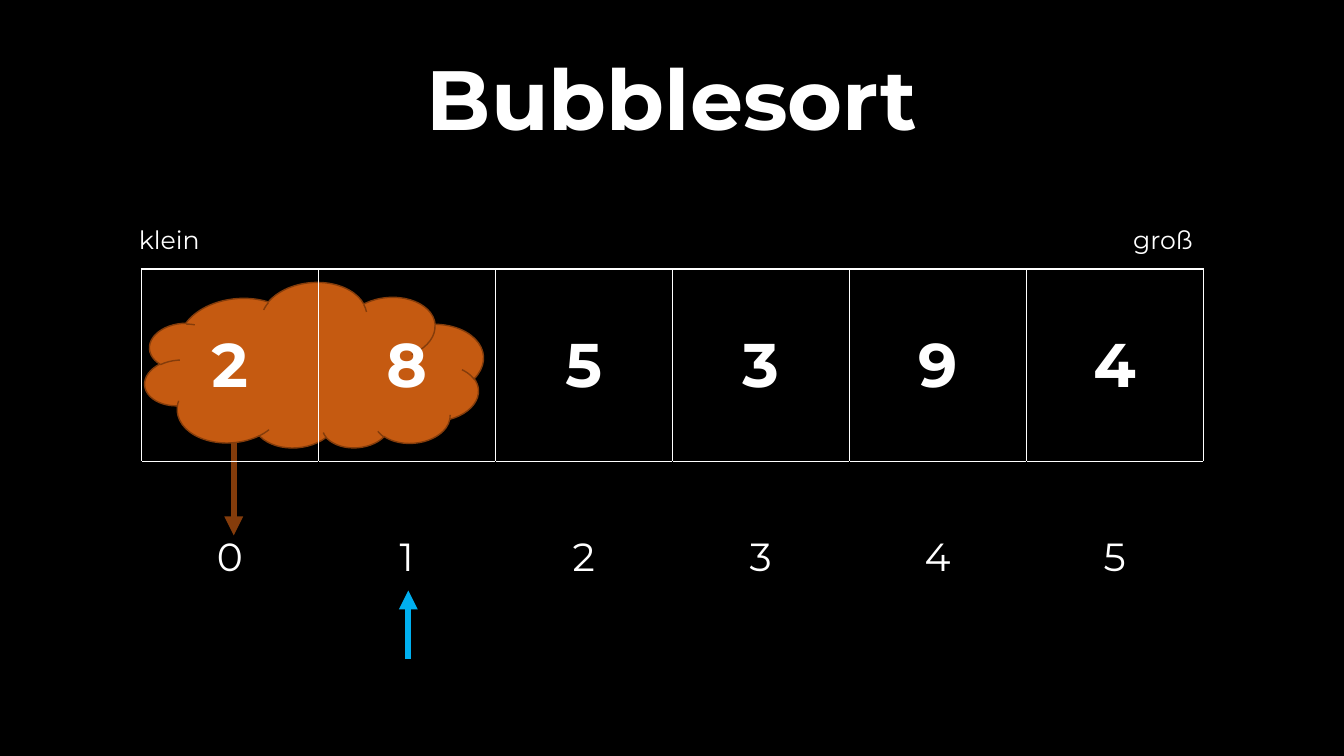
from lxml import etree
from pptx import Presentation
from pptx import util as u
from pptx.dml.color import RGBColor
from pptx.enum import shapes, text
from pptx.oxml.ns import qn

FONT = "Montserrat"
WHITE, BLACK = "FFFFFF", "000000"
BROWN, ORANGE, BLUE = "843C0B", "C55A11", "00B0F0"
VALUES = [2, 8, 5, 3, 9, 4]
COL_W, ROW_H = 4.46, 4.85
TABLE_X, TABLE_Y = 3.56, 6.78


def rgb(color):
    return RGBColor.from_string(color)


def box(*lengths):
    return [u.Cm(n) for n in lengths]


def write(tf, content, size, align, bold=False):
    """Fill a text frame with one white paragraph."""
    tf.text = str(content)
    p = tf.paragraphs[0]
    p.alignment = align
    p.font.name, p.font.size, p.font.bold = FONT, u.Pt(size), bold
    p.font.color.rgb = rgb(WHITE)
    return p


def add_title(s, content):
    sp = s.shapes.title
    sp.left, sp.top, sp.width, sp.height = box(0.38, 0.79, 33.1, 3.61)
    tf = sp.text_frame
    tf.word_wrap = True
    tf.auto_size = text.MSO_AUTO_SIZE.NONE
    tf.vertical_anchor = text.MSO_ANCHOR.MIDDLE
    p = write(tf, content, 60, text.PP_ALIGN.CENTER, True)
    p.line_spacing = 0.9
    p.space_before = u.Pt(10)


def add_label(s, content, x, align):
    tf = s.shapes.add_textbox(*box(x, 5.54, 3.84, 1.02)).text_frame
    tf.word_wrap = True
    write(tf, content, 18, align)


def add_arrow(s, x, y_from, y_to, color):
    """Draw a vertical arrow with its head at y_to."""
    c = s.shapes.add_connector(shapes.MSO_CONNECTOR.STRAIGHT, *box(x, y_from, x, y_to))
    c.line.color.rgb = rgb(color)
    c.line.width = u.Pt(4.5)
    etree.SubElement(c.line._get_or_add_ln(), qn("a:tailEnd"), type="triangle")
    etree.SubElement(c._element.spPr, qn("a:effectLst"))


def add_cloud(s):
    sp = s.shapes.add_shape(shapes.MSO_SHAPE.CLOUD, *box(3.63, 7.14, 8.56, 4.24))
    sp.shadow.inherit = False
    sp.fill.solid()
    sp.fill.fore_color.rgb = rgb(ORANGE)
    sp.line.color.rgb = rgb(BROWN)
    sp.line.width = u.Pt(1)
    sp.rotation = 355.5
    sp._element.spPr.find(qn("a:xfrm")).set("flipV", "1")


def set_borders(cell, **colors):
    """Set 1 pt borders, given as L, R, T and B."""
    tcPr = cell._tc.get_or_add_tcPr()
    for side, color in colors.items():
        ln = etree.SubElement(tcPr, qn(f"a:ln{side}"), w=str(u.Pt(1)))
        fill = etree.SubElement(ln, qn("a:solidFill"))
        etree.SubElement(fill, qn("a:srgbClr"), val=color)


def add_array(s, values):
    """Draw the framed values above their indices."""
    n = len(values)
    table = s.shapes.add_table(
        2, n, *box(TABLE_X, TABLE_Y, COL_W * n, ROW_H * 2)).table
    table.first_row = table.horz_banding = False
    for col in table.columns:
        col.width = u.Cm(COL_W)
    rows = [(values, 44, True, WHITE), (range(n), 28, False, BLACK)]
    for i, (numbers, size, bold, edge) in enumerate(rows):
        table.rows[i].height = u.Cm(ROW_H)
        for j, number in enumerate(numbers):
            cell = table.cell(i, j)
            cell.vertical_anchor = text.MSO_ANCHOR.MIDDLE
            write(cell.text_frame, number, size, text.PP_ALIGN.CENTER, bold)
            set_borders(cell, L=edge, R=edge, T=WHITE, B=edge)
            cell.fill.background()


def main():
    prs = Presentation()
    prs.slide_width, prs.slide_height = box(33.87, 19.05)
    s = prs.slides.add_slide(prs.slide_layouts[5])
    s.background.fill.solid()
    s.background.fill.fore_color.rgb = rgb(BLACK)
    add_title(s, "Bubblesort")
    add_arrow(s, 5.89, 11.1, 13.49, BROWN)
    add_cloud(s)
    add_array(s, VALUES)
    add_label(s, "groß", 26.47, text.PP_ALIGN.RIGHT)
    add_label(s, "klein", 3.25, text.PP_ALIGN.LEFT)
    add_arrow(s, 10.29, 16.61, 14.88, BLUE)
    prs.save("out.pptx")


if __name__ == "__main__":
    main()
